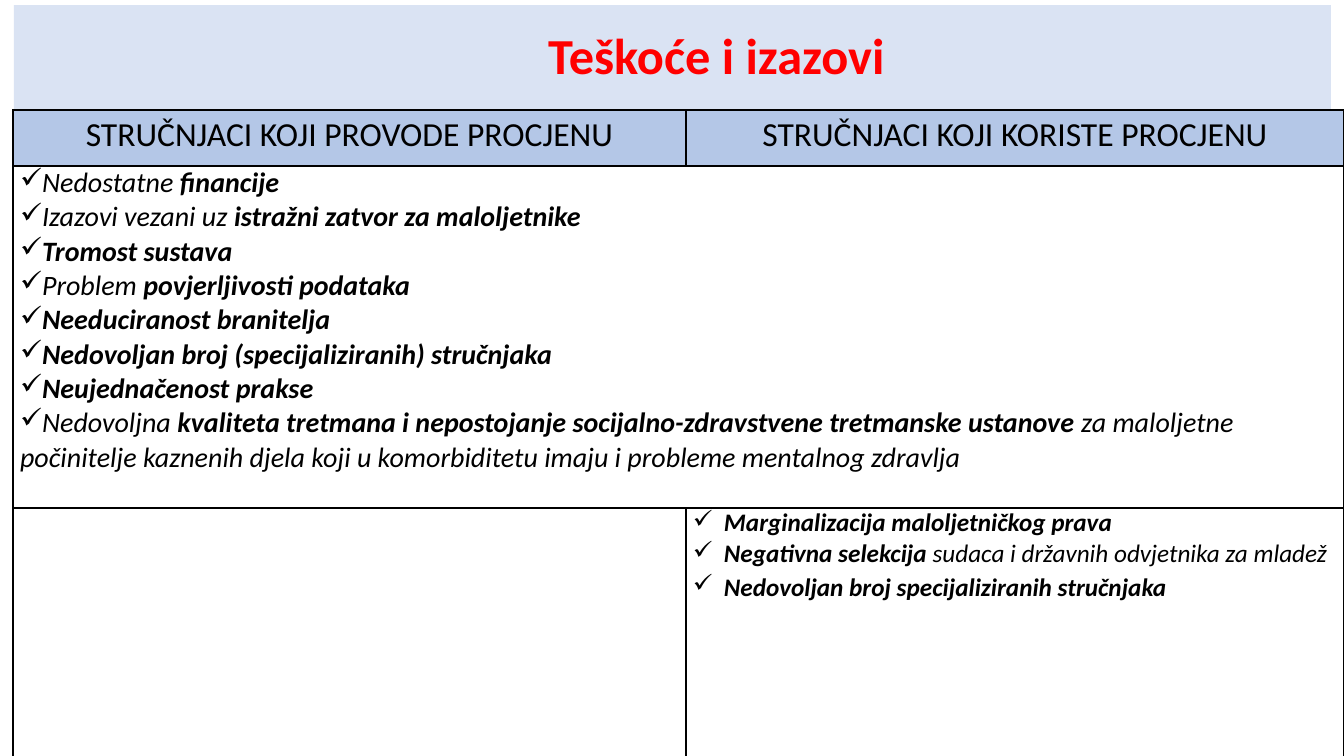
from lxml import etree
from pptx import Presentation
from pptx.dml.color import RGBColor as RGB
from pptx.enum.text import MSO_ANCHOR as Anchor, PP_ALIGN as Align
from pptx.oxml.ns import qn
from pptx.util import Emu, Pt

SCALE = 914400 / 100.8
FONT = "Calibri"
TITLE = "Teškoće i izazovi"
HEADS = ["STRUČNJACI KOJI PROVODE PROCJENU", "STRUČNJACI KOJI KORISTE PROCJENU"]
# Bold words stand between asterisks.
SHARED = [
    "Nedostatne *financije*",
    "Izazovi vezani uz *istražni zatvor za maloljetnike*",
    "*Tromost sustava*",
    "Problem *povjerljivosti podataka*",
    "*Needuciranost branitelja*",
    "*Nedovoljan broj (specijaliziranih) stručnjaka*",
    "*Neujednačenost prakse*",
    "Nedovoljna *kvaliteta tretmana i nepostojanje socijalno-zdravstvene "
    "tretmanske ustanove *za maloljetne počinitelje kaznenih djela koji u "
    "komorbiditetu imaju i probleme mentalnog zdravlja",
]
USERS = [
    "*Marginalizacija maloljetničkog prava*",
    "*Negativna selekcija *sudaca i državnih odvjetnika za mladež",
    "*Nedovoljan broj specijaliziranih stručnjaka*",
]


def px(num):
    return Emu(round(num * SCALE))


def color(code):
    return RGB.from_string(code)


def style(run, size, code="000000", bold=False, italic=False):
    font = run.font
    font.name, font.size = FONT, Pt(size)
    font.bold, font.italic = bold, italic
    font.color.rgb = color(code)


def paint(fill, code):
    fill.solid()
    fill.fore_color.rgb = color(code)


def add_title(slide):
    box = slide.shapes.add_textbox(px(14), px(5), px(1317), px(106))
    paint(box.fill, "DAE3F3")
    frame = box.text_frame
    frame.word_wrap = True
    frame.vertical_anchor = Anchor.MIDDLE
    frame.margin_left = px(98)
    frame.text = TITLE
    para = frame.paragraphs[0]
    para.alignment = Align.CENTER
    para.line_spacing = 0.9
    style(para.runs[0], 36, "FF0000", bold=True)


def edge(cell):
    """Draw a thin black line on all four sides of a cell."""
    props = cell._tc.get_or_add_tcPr()
    for pos, side in enumerate(("lnL", "lnR", "lnT", "lnB")):
        line = etree.Element(qn(f"a:{side}"), w=str(Pt(1)))
        fill = etree.SubElement(line, qn("a:solidFill"))
        etree.SubElement(fill, qn("a:srgbClr"), val="000000")
        props.insert(pos, line)


def fill_head(cell, text):
    paint(cell.fill, "B4C7E7")
    cell.text_frame.text = text
    para = cell.text_frame.paragraphs[0]
    para.alignment = Align.CENTER
    style(para.runs[0], 24)


def fill_list(cell, items, size, left):
    """Fill a cell with ticked items, indented by left px."""
    cell.margin_left = cell.margin_right = px(7)
    cell.margin_top = cell.margin_bottom = 0
    frame = cell.text_frame
    frame.text = "\n" * (len(items) - 1)
    for para, item in zip(frame.paragraphs, items):
        props = para._p.get_or_add_pPr()
        props.set("marL", str(px(left)))
        props.set("indent", str(px(-31)))
        etree.SubElement(props, qn("a:buChar"), char="✓")
        for pos, part in enumerate(item.split("*")):
            if part:
                run = para.add_run()
                run.text = part
                style(run, size, bold=pos % 2 == 1, italic=True)


def add_grid(slide):
    cols, rows = [673, 658], [56, 342, 261]
    frame = slide.shapes.add_table(
        len(rows), len(cols), px(13), px(110), px(sum(cols)), px(sum(rows)))
    table = frame.table
    table.first_row = table.horz_banding = False
    for col, width in zip(table.columns, cols):
        col.width = px(width)
    for row, height in zip(table.rows, rows):
        row.height = px(height)
    for cell in table.iter_cells():
        cell.fill.background()
    for num, text in enumerate(HEADS):
        fill_head(table.cell(0, num), text)
    table.cell(1, 0).merge(table.cell(1, 1))
    fill_list(table.cell(1, 0), SHARED, 20, 0)
    users = table.cell(2, 1)
    fill_list(users, USERS, 18, 31)
    users.text_frame.paragraphs[-1].space_before = Pt(2)
    for cell in table.iter_cells():
        edge(cell)


def main():
    deck = Presentation()
    deck.slide_width, deck.slide_height = px(1344), px(756)
    slide = deck.slides.add_slide(deck.slide_layouts[6])
    add_title(slide)
    add_grid(slide)
    deck.save("out.pptx")


if __name__ == "__main__":
    main()
